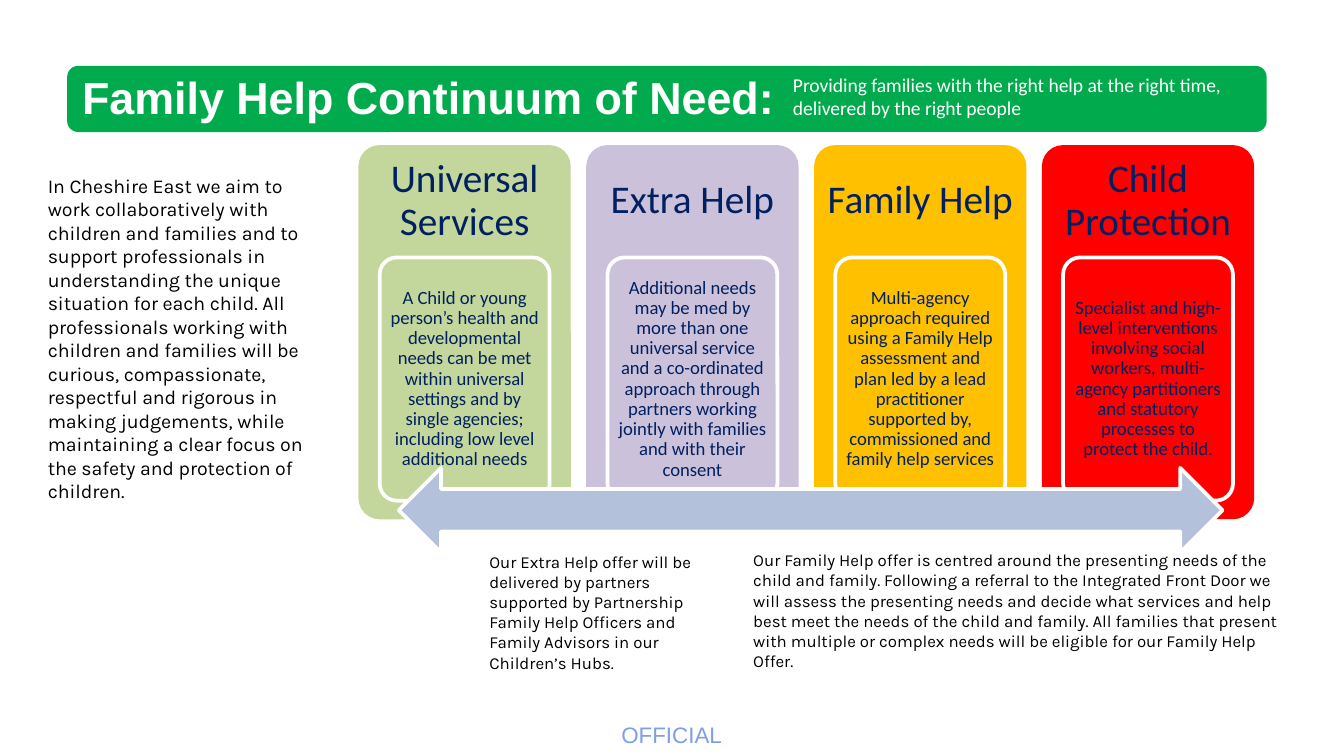
from pptx import Presentation
from pptx import util as u
from pptx.dml.color import RGBColor
from pptx.enum import shapes, text

HUES = {
    "green": "01AB4D", "sage": "C3D69B", "lilac": "CCC1DA", "gold": "FFC000",
    "red": "FF0000", "steel": "B3C1DB", "navy": "002060", "white": "FFFFFF",
    "black": "000000", "mark": "7F9EE3",
}
FORMS = shapes.MSO_SHAPE
MID = text.MSO_ANCHOR.MIDDLE
TOP = text.MSO_ANCHOR.TOP
INSET = (0.1, 0.05, 0.1, 0.05)
WIDE = u.Inches(10)
HIGH = WIDE * 9 // 16

STAGES = [
    ("sage", "Universal Services",
     "A Child or young person’s health and developmental needs can be met within "
     "universal settings and by single agencies; including low level additional needs"),
    ("lilac", "Extra Help",
     "Additional needs may be med by more than one universal service and a co-ordinated "
     "approach through partners working jointly with families and with their consent"),
    ("gold", "Family Help",
     "Multi-agency approach required using a Family Help assessment and plan led by a "
     "lead practitioner supported by, commissioned and family help services"),
    ("red", "Child Protection",
     "Specialist and high-level interventions involving social workers, multi-agency "
     "partitioners and statutory processes to protect the child."),
]
NOTES = [
    ((2.57, 22.1, 21.8, 45.7), 10.5,
     "In Cheshire East we aim to work collaboratively with children and families and to "
     "support professionals in understanding the unique situation for each child. All "
     "professionals working with children and families will be curious, compassionate, "
     "respectful and rigorous in making judgements, while maintaining a clear focus on "
     "the safety and protection of children."),
    ((35.43, 72.05, 19.6, 15.3), 9,
     "Our Extra Help offer will be delivered by partners supported by Partnership Family "
     "Help Officers and Family Advisors in our Children’s Hubs."),
    ((55.06, 71.87, 41.8, 18), 9,
     "Our Family Help offer is centred around the presenting needs of the child and "
     "family. Following a referral to the Integrated Front Door we will assess the "
     "presenting needs and decide what services and help best meet the needs of the child "
     "and family. All families that present with multiple or complex needs will be "
     "eligible for our Family Help Offer."),
]


def tint(name):
    return RGBColor.from_string(HUES[name])


def part(box, left, top, wide, high):
    x, y, w, h = box
    return x + w * left, y + h * top, w * wide, h * high


def place(box):
    x, y, w, h = box
    return [int(n) for n in (WIDE * x / 100, HIGH * y / 100,
                             WIDE * w / 100, HIGH * h / 100)]


def write(shape, words, size, face, hue, anchor=TOP, inset=INSET, bold=False,
          align=text.PP_ALIGN.LEFT, pitch=1.0):
    frame = shape.text_frame
    frame.text = words
    frame.word_wrap = True
    frame.auto_size = text.MSO_AUTO_SIZE.NONE
    frame.vertical_anchor = anchor
    (frame.margin_left, frame.margin_top,
     frame.margin_right, frame.margin_bottom) = map(u.Inches, inset)
    para = frame.paragraphs[0]
    para.alignment, para.line_spacing = align, pitch
    font = para.font
    font.size, font.name, font.bold = u.Pt(size), face, bold
    font.color.rgb = tint(hue)


def draw(slide, form, box, fill, edge=False, curve=None):
    shape = slide.shapes.add_shape(form, *place(box))
    shape.shadow.inherit = False
    shape.fill.solid()
    shape.fill.fore_color.rgb = tint(fill)
    if edge:
        shape.line.color.rgb = tint("white")
        shape.line.width = u.Pt(2)
    else:
        shape.line.fill.background()
    if curve is not None:
        shape.adjustments[0] = curve


def label(slide, box, *args, **style):
    write(slide.shapes.add_textbox(*place(box)), *args, **style)


def banner(slide, box):
    draw(slide, FORMS.ROUNDED_RECTANGLE, box, "green")
    x, y, w, h = box
    label(slide, (x + 0.13, y - 0.35, 54.4, h), "Family Help Continuum of Need:",
          24, "Arial", "white", anchor=MID, bold=True)
    title = slide.shapes.title
    title.left, title.top, title.width, title.height = place(
        (x + 53, y - 0.35, w - 53, h))
    write(title, "Providing families with the right help at the right time, \v"
          "delivered by the right people", 10.5, "Calibri", "white", anchor=MID)
    slide.shapes._spTree.append(title._element)


def stage(slide, box, hue, name, detail):
    style = dict(anchor=MID, align=text.PP_ALIGN.CENTER, pitch=0.9)
    draw(slide, FORMS.ROUNDED_RECTANGLE, box, hue, curve=0.1)
    label(slide, part(box, 0, 0, 1, 0.3), name, 21, "Calibri", "navy",
          inset=(0.09, 0.09, 0.09, 0.09), **style)
    inner = part(box, 0.1, 0.3, 0.8, 0.65)
    draw(slide, FORMS.ROUNDED_RECTANGLE, inner, hue, edge=True, curve=0.1)
    label(slide, part(inner, 0.03, 0.02, 0.94, 0.96), detail, 10, "Calibri", "navy",
          inset=(0.03, 0.02, 0.03, 0.02), **style)


def range_row(slide, box):
    step = 16.95
    x, y, w, h = box
    for col, item in enumerate(STAGES):
        stage(slide, (x + col * step, y, w - 3 * step, h), *item)
    draw(slide, FORMS.LEFT_RIGHT_ARROW, (x + 3, y + 42.7, w - 5.35, 11.2),
         "steel", edge=True)


def main():
    deck = Presentation()
    deck.slide_width, deck.slide_height = WIDE, HIGH
    slide = deck.slides.add_slide(deck.slide_layouts[5])
    label(slide, (46.23, 95.4, 8, 3.6), "OFFICIAL", 12, "Arial", "mark",
          inset=(0, 0, 0, 0))
    range_row(slide, (26.67, 19.2, 66.65, 49.5))
    for box, size, words in NOTES:
        label(slide, box, words, size, "Karla", "black")
    banner(slide, (5, 8.72, 89.25, 8.75))
    deck.save("out.pptx")


if __name__ == "__main__":
    main()
